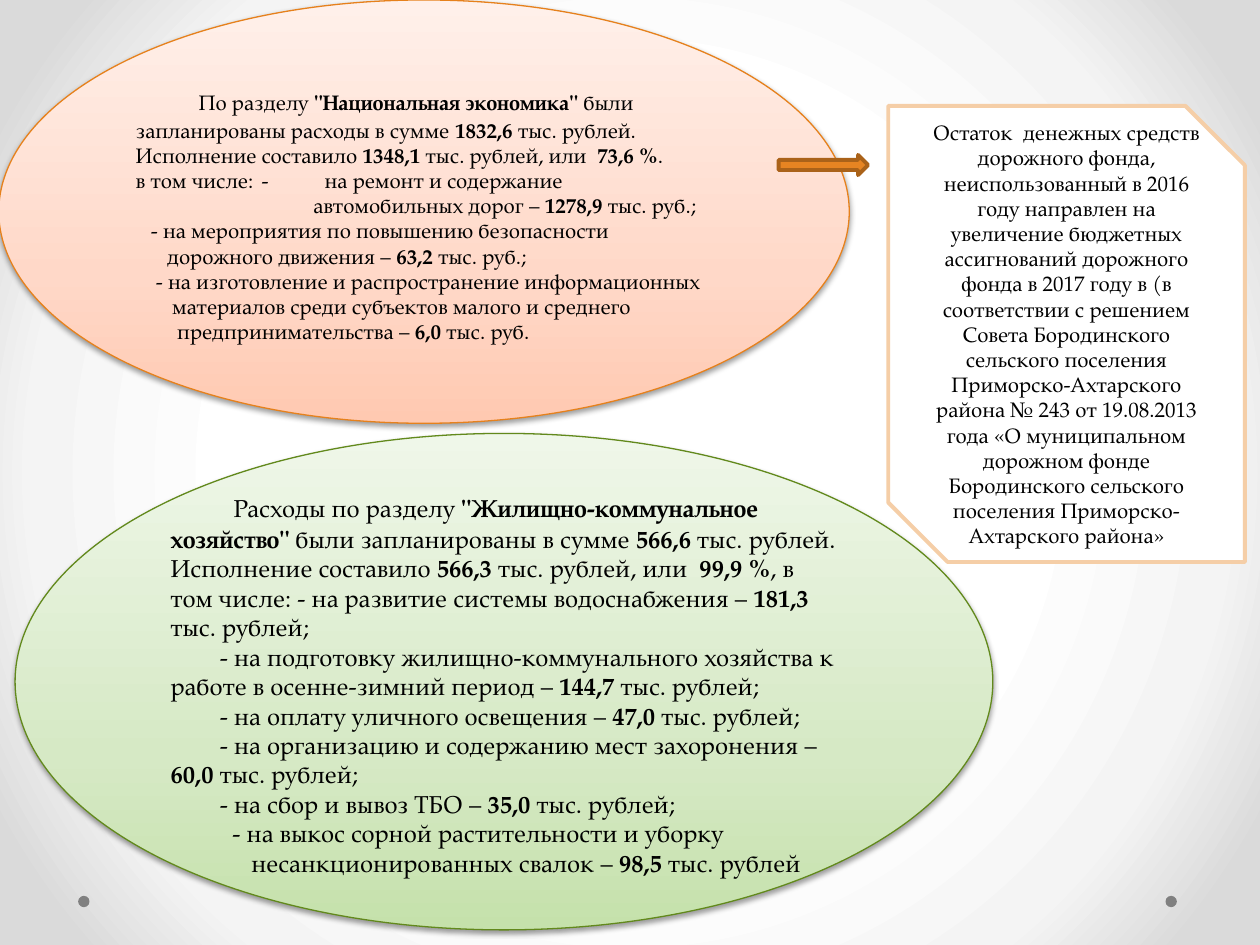
from lxml import etree
from pptx import Presentation
from pptx import util as u
from pptx.dml.color import RGBColor
from pptx.enum import shapes, text
from pptx.oxml import ns

FONT = "TeX Gyre Pagella"
HEX = {
    "ink": "000000", "white": "FFFFFF", "dot": "808080",
    "peach": "E6811C", "green": "62891C",
    "arrow": "E68422", "edge": "AA6219", "frame": "F5CEA7",
}
FADES = {
    "page": [(50, "FFFFFF"), (76, "F4F4F4"), (92, "DADADA")],
    "peach": [(0, "FFC9B1"), (35, "FFD8C8"), (100, "FFF0EA")],
    "green": [(0, "C5E1AB"), (35, "D6E9C5"), (100, "EFF7E9")],
}

# Each row: first-line indent, tab stops, wording with *bold* parts
ECONOMY = [
    (0, [1], "\tПо разделу *\"Национальная экономика\" *были запланированы "
     "расходы в сумме *1832,6* тыс. рублей. Исполнение составило *1348,1 *"
     "тыс. рублей, или  *73,6 %*."),
    (0, [1.17, 1.44], "в том числе:\t-\tна ремонт и содержание"),
    (1.41, [], "автомобильных дорог – *1278,9* тыс. руб.;"),
    (0.12, [], "- на мероприятия по повышению безопасности"),
    (0.25, [], "дорожного движения – *63,2 *тыс. руб.;"),
    (0.16, [], "- на изготовление и распространение информационных"),
    (0.29, [], "материалов среди субъектов малого и среднего"),
    (0.33, [], "предпринимательства – *6,0 *тыс. руб."),
]
HOUSING = [
    (0, [1], "\tРасходы по разделу *\"Жилищно-коммунальное хозяйство\"* были "
     "запланированы в сумме *566,6* тыс. рублей. Исполнение составило "
     "*566,3* тыс. рублей, или  *99,9 %*, в том числе: - на развитие "
     "системы водоснабжения – *181,3* тыс. рублей;"),
    (0.39, [], "- на подготовку жилищно-коммунального хозяйства к работе в "
     "осенне-зимний период – *144,7* тыс. рублей;"),
    (0.39, [], "- на оплату уличного освещения – *47,0* тыс. рублей;"),
    (0.39, [], "- на организацию и содержанию мест захоронения – *60,0* "
     "тыс. рублей;"),
    (0.39, [], "- на сбор и вывоз ТБО – *35,0* тыс. рублей;"),
    (0.49, [], "- на выкос сорной растительности и уборку"),
    (0.64, [], "несанкционированных свалок – *98,5 *тыс. рублей"),
]
BALANCE = [
    (0, [], "Остаток  денежных средств дорожного фонда, неиспользованный в "
     "2016 году направлен на увеличение бюджетных ассигнований дорожного "
     "фонда в 2017 году в (в соответствии с решением Совета Бородинского "
     "сельского поселения Приморско-Ахтарского района № 243 от 19.08.2013 "
     "года «О муниципальном дорожном фонде Бородинского сельского поселения "
     "Приморско-Ахтарского района»"),
]


def color(name):
    return RGBColor.from_string(HEX[name])


def node(parent, tag, **attrs):
    item = etree.SubElement(parent, ns.qn("a:" + tag))
    for key, value in attrs.items():
        item.set(key, str(value))
    return item


def fade(owner, stops, angle=None):
    """Replace the solid fill in owner by a linear or a circular gradient."""
    old = owner.find(ns.qn("a:solidFill"))
    grad = etree.Element(ns.qn("a:gradFill"), rotWithShape="1")
    owner.replace(old, grad)
    steps = node(grad, "gsLst")
    for pos, rgb in stops:
        node(node(steps, "gs", pos=pos * 1000), "srgbClr", val=rgb)
    if angle is None:
        ring = node(grad, "path", path="circle")
        node(ring, "fillToRect", l=50000, t=50000, r=50000, b=50000)
    else:
        node(grad, "lin", ang=angle * 60000, scaled=0)


def shade(shape):
    """Give the shape a soft shadow below it."""
    effects = shape._element.spPr.find(ns.qn("a:effectLst"))
    drop = node(effects, "outerShdw", blurRad=u.Pt(3.1), dist=u.Pt(1.6),
                dir=90 * 60000, algn="ctr", rotWithShape=0)
    node(node(drop, "srgbClr", val=HEX["ink"]), "alpha", val=38000)


def add_form(slide, kind, box, fill, line=None, width=0.75):
    shape = slide.shapes.add_shape(kind, *map(u.Inches, box))
    shape.shadow.inherit = False
    shape.fill.solid()
    shape.fill.fore_color.rgb = color(fill)
    if line:
        shape.line.color.rgb = color(line)
        shape.line.width = u.Pt(width)
    else:
        shape.line.fill.background()
    return shape


def add_run(par, words, size, bold=False):
    run = par.add_run()
    run.text = words
    run.font.name = FONT
    run.font.size = u.Pt(size)
    run.font.bold = bold
    run.font.color.rgb = color("ink")


def add_text(shape, rows, size, align):
    frame = shape.text_frame
    frame.word_wrap = True
    frame.vertical_anchor = text.MSO_ANCHOR.MIDDLE
    for num, (indent, stops, words) in enumerate(rows):
        par = frame.add_paragraph() if num else frame.paragraphs[0]
        par.alignment = align
        props = par._p.get_or_add_pPr()
        props.set("marL", "0")
        props.set("indent", str(u.Inches(indent)))
        if stops:
            tabs = node(props, "tabLst")
            for stop in stops:
                node(tabs, "tab", pos=u.Inches(stop), algn="l")
        # The opening tab is larger than the wording
        if words.startswith("\t"):
            add_run(par, "\t", 18)
            words = words[1:]
        for part, piece in enumerate(words.split("*")):
            if piece:
                add_run(par, piece, size, part % 2 == 1)


def add_oval(slide, box, name, rows, size):
    oval = add_form(slide, shapes.MSO_SHAPE.OVAL, box, name, name)
    fade(oval._element.spPr, FADES[name], 270)
    shade(oval)
    add_text(oval, rows, size, text.PP_ALIGN.LEFT)


def main():
    deck = Presentation()
    deck.slide_width, deck.slide_height = u.Inches(10), u.Inches(7.5)
    slide = deck.slides.add_slide(deck.slide_layouts[6])
    kinds = shapes.MSO_SHAPE

    # Background and footer dots
    back = slide.background.fill
    back.solid()
    back.fore_color.rgb = color("white")
    fade(slide._element.cSld.bg.bgPr, FADES["page"])
    for left in (9.25, 0.62):
        add_form(slide, kinds.OVAL, (left, 7.11, 0.09, 0.09), "dot")

    # Spending sections
    add_oval(slide, (-0.01, 0, 6.75, 3.36), "peach", ECONOMY, 12)
    add_oval(slide, (0.12, 3.44, 7.76, 3.94), "green", HOUSING, 14)

    # Arrow to the road fund note
    add_form(slide, kinds.RIGHT_ARROW, (6.18, 1.23, 0.71, 0.16),
             "arrow", "edge", 2.25)
    note = add_form(slide, kinds.SNIP_2_DIAG_RECTANGLE,
                    (7.05, 0.84, 2.83, 3.62), "white", "frame", 2.25)
    add_text(note, BALANCE, 12, text.PP_ALIGN.CENTER)

    deck.save("out.pptx")


if __name__ == "__main__":
    main()
